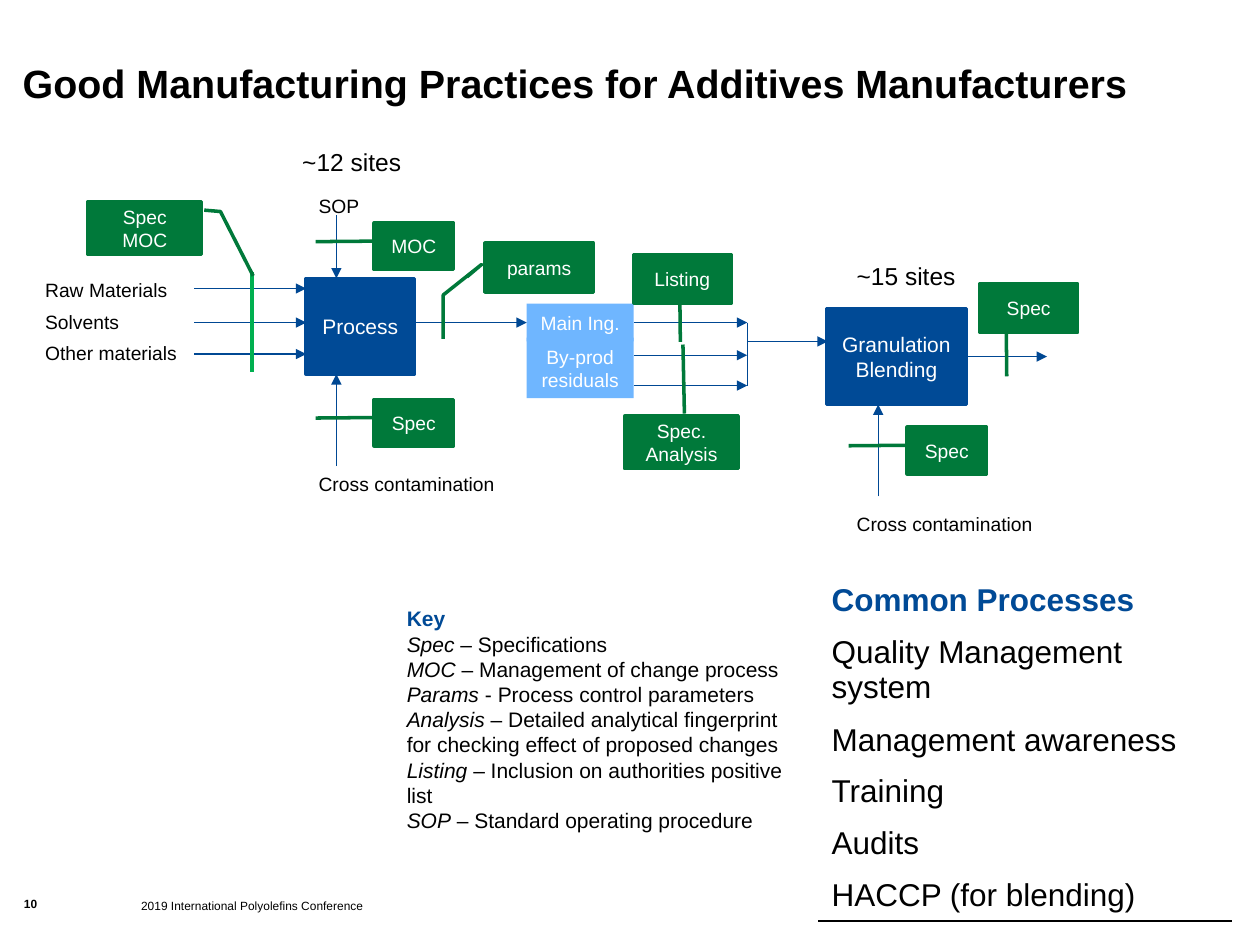
from lxml import etree
from pptx import Presentation
from pptx.dml.color import RGBColor
from pptx.enum.shapes import MSO_CONNECTOR as Connector, MSO_SHAPE as Shape
from pptx.enum.text import MSO_ANCHOR as Anchor, MSO_AUTO_SIZE as AutoSize, PP_ALIGN as Align
from pptx.oxml import parse_xml
from pptx.oxml.ns import nsdecls, qn
from pptx.util import Inches, Pt

BLACK = RGBColor(0x00, 0x00, 0x00)
WHITE = RGBColor(0xFF, 0xFF, 0xFF)
NAVY = RGBColor(0x00, 0x4A, 0x96)
FLOW_BLUE = RGBColor(0x00, 0x48, 0x93)
LIGHT_BLUE = RGBColor(0x6F, 0xB6, 0xFF)
GREEN = RGBColor(0x00, 0x79, 0x3A)
BRIGHT_GREEN = RGBColor(0x00, 0xB0, 0x50)
FONT = "Arial"

SIDE_GATE = (0.39, 0.001, 0.401, -0.738)
GATES = [
    ("Spec\nMOC", 0.7, 1.6, 0.9, 0.42, Shape.LINE_CALLOUT_2,
     (0.162, 1.024, 0.188, 1.167, 1.403, 1.455)),
    ("MOC", 2.97, 1.77, 0.63, 0.37, Shape.LINE_CALLOUT_1, SIDE_GATE),
    ("Spec", 2.97, 3.17, 0.63, 0.37, Shape.LINE_CALLOUT_1, SIDE_GATE),
    ("params", 3.85, 1.93, 0.86, 0.39, Shape.LINE_CALLOUT_3,
     (0.687, -0.168, 0.433, -0.032, 1.054, -0.386, 1.946, -0.387)),
    ("Listing", 5.03, 2.02, 0.77, 0.39, Shape.LINE_CALLOUT_1, (0.977, 0.476, 1.779, 0.481)),
    ("Spec.\nAnalysis", 4.96, 3.3, 0.9, 0.42, Shape.LINE_CALLOUT_1,
     (-0.044, 0.525, -1.347, 0.512)),
    ("Spec", 7.2, 3.39, 0.63, 0.37, Shape.LINE_CALLOUT_1, SIDE_GATE),
    ("Spec", 7.78, 2.25, 0.77, 0.39, Shape.LINE_CALLOUT_1, (1.004, 0.269, 1.887, 0.274)),
]
LABELS = [
    ("Raw Materials", 0.26, 2.16, 1.27, 11),
    ("Solvents", 0.26, 2.41, 1.27, 11),
    ("Other materials", 0.26, 2.66, 1.27, 11),
    ("SOP", 2.43, 1.49, 1.07, 11),
    ("Cross contamination", 2.43, 3.7, 1.62, 11),
    ("Cross contamination", 6.7, 4.02, 1.62, 11),
    ("~15 sites", 6.7, 2.02, 1.12, 14),
    ("~12 sites", 2.3, 1.12, 1.12, 14),
]
KEY_TERMS = [
    ("Spec", " – Specifications"),
    ("MOC", " – Management of change process"),
    ("Params", " - Process control parameters"),
    ("Analysis", " – Detailed analytical fingerprint for checking effect of proposed changes"),
    ("Listing", " – Inclusion on authorities positive list"),
    ("SOP", " – Standard operating procedure"),
]
COMMON_PROCESSES = [
    "Common Processes", "Quality Management system", "Management awareness",
    "Training", "Audits", "HACCP (for blending)",
]


def format_run(run, size, color, bold=False, italic=False):
    run.font.name = FONT
    run.font.size = Pt(size)
    run.font.color.rgb = color
    run.font.bold = bold
    run.font.italic = italic


def set_text(text_frame, text, size, color, bold=False, align=Align.LEFT):
    text_frame.text = text
    for paragraph in text_frame.paragraphs:
        paragraph.alignment = align
        for run in paragraph.runs:
            format_run(run, size, color, bold)


def clear_margins(text_frame):
    text_frame.margin_left = text_frame.margin_right = 0
    text_frame.margin_top = text_frame.margin_bottom = 0


def add_title(slide, text):
    title = slide.shapes.title
    title.left, title.top = Inches(0.18), Inches(0.47)
    title.width, title.height = Inches(9.63), Inches(0.93)
    text_frame = title.text_frame
    set_text(text_frame, text, 22.5, BLACK, bold=True)
    clear_margins(text_frame)
    text_frame.auto_size = AutoSize.NONE
    text_frame.vertical_anchor = Anchor.TOP


def add_label(slide, text, left, top, width, size, height=0.29, bold=False):
    label = slide.shapes.add_textbox(Inches(left), Inches(top), Inches(width), Inches(height))
    label.text_frame.word_wrap = True
    set_text(label.text_frame, text, size, BLACK, bold)
    return label


def add_box(slide, text, left, top, width, height, fill, size=11, kind=Shape.RECTANGLE, outlined=True):
    box = slide.shapes.add_shape(kind, Inches(left), Inches(top), Inches(width), Inches(height))
    box.shadow.inherit = False
    box.fill.solid()
    box.fill.fore_color.rgb = fill
    if outlined:
        box.line.color.rgb = fill
        box.line.width = Pt(2)
    else:
        box.line.fill.background()
    box.text_frame.vertical_anchor = Anchor.MIDDLE
    set_text(box.text_frame, text, size, WHITE, align=Align.CENTER)
    return box


def add_gate(slide, text, left, top, width, height, kind, adjustments):
    gate = add_box(slide, text, left, top, width, height, GREEN, kind=kind)
    for index, value in enumerate(adjustments):
        gate.adjustments[index] = value


def add_line(slide, start, end, color=FLOW_BLUE, width=0.75, arrow=False):
    points = [Inches(value) for value in (*start, *end)]
    line = slide.shapes.add_connector(Connector.STRAIGHT, *points)
    line.line.color.rgb = color
    line.line.width = Pt(width)
    properties = line._element.spPr
    if arrow:
        etree.SubElement(properties.find(qn("a:ln")), qn("a:tailEnd"), type="triangle")
    etree.SubElement(properties, qn("a:effectLst"))
    return line


def add_flow(slide):
    add_box(slide, "Process", 2.43, 2.21, 0.86, 0.76, NAVY, size=12)
    main_ingredient = add_box(slide, "Main Ing.", 4.18, 2.41, 0.85, 0.3, LIGHT_BLUE, outlined=False)
    add_box(slide, "By-prod\nresiduals", 4.18, 2.68, 0.85, 0.48, LIGHT_BLUE, outlined=False)
    blending = add_box(slide, "Granulation\nBlending", 6.56, 2.45, 1.11, 0.76, NAVY, size=12)

    for y in (2.29, 2.56, 2.81):
        add_line(slide, (1.54, y), (2.43, y), arrow=True)
    for x, start, end in ((2.67, 1.71, 2.21), (2.67, 3.7, 2.97), (6.97, 3.94, 3.21)):
        add_line(slide, (x, start), (x, end), arrow=True)
    product = add_line(slide, (3.29, 2.56), (4.18, 2.56), arrow=True)
    product.end_connect(main_ingredient, 1)
    outputs = [add_line(slide, (5.03, y), (5.93, y), arrow=True) for y in (2.56, 2.82, 3.06)]
    outputs[0].begin_connect(main_ingredient, 3)
    add_line(slide, (5.93, 2.56), (5.93, 3.06))
    add_line(slide, (5.93, 2.71), (6.57, 2.71), arrow=True)
    delivery = add_line(slide, (7.67, 2.83), (8.31, 2.83), arrow=True)
    delivery.begin_connect(blending, 3)
    add_line(slide, (2, 2.16), (2, 2.95), BRIGHT_GREEN, 2)


def add_key(slide):
    key = add_label(slide, "Key", 3.13, 4.76, 3.32, 12, height=1.92)
    format_run(key.text_frame.paragraphs[0].runs[0], 12, NAVY, bold=True)
    for term, meaning in KEY_TERMS:
        paragraph = key.text_frame.add_paragraph()
        for text, italic in ((term, True), (meaning, False)):
            run = paragraph.add_run()
            run.text = text
            format_run(run, 12, BLACK, italic=italic)


def add_bottom_border(cell):
    border = parse_xml(
        f'<a:lnB {nsdecls("a")} w="{Pt(1)}"><a:solidFill>'
        f'<a:srgbClr val="{BLACK}"/></a:solidFill></a:lnB>'
    )
    cell._tc.get_or_add_tcPr().insert(0, border)


def add_process_table(slide):
    count = len(COMMON_PROCESSES)
    frame = slide.shapes.add_table(
        count, 1, Inches(6.5), Inches(4.56), Inches(3.27), Inches(0.41 * count))
    table = frame.table
    table.horz_banding = False
    for index, text in enumerate(COMMON_PROCESSES):
        cell = table.cell(index, 0)
        cell.fill.background()
        cell.vertical_anchor = Anchor.MIDDLE
        header = index == 0
        set_text(cell.text_frame, text, 18, NAVY if header else BLACK, bold=header)
        add_bottom_border(cell)


def add_footer(slide):
    number = add_label(slide, "10", 0.19, 7.12, 0.32, 6.8, height=0.17, bold=True)
    conference = add_label(
        slide, "2019 International Polyolefins Conference", 1.12, 7.13, 2.76, 6.8, height=0.18)
    for footer in (number, conference):
        clear_margins(footer.text_frame)


def main():
    presentation = Presentation()
    presentation.slide_width, presentation.slide_height = Inches(10), Inches(7.5)
    slide = presentation.slides.add_slide(presentation.slide_layouts[5])
    add_title(slide, "Good Manufacturing Practices for Additives Manufacturers")
    add_flow(slide)
    for gate in GATES:
        add_gate(slide, *gate)
    for label in LABELS:
        add_label(slide, *label)
    add_key(slide)
    add_process_table(slide)
    add_footer(slide)
    presentation.save("out.pptx")


if __name__ == "__main__":
    main()
